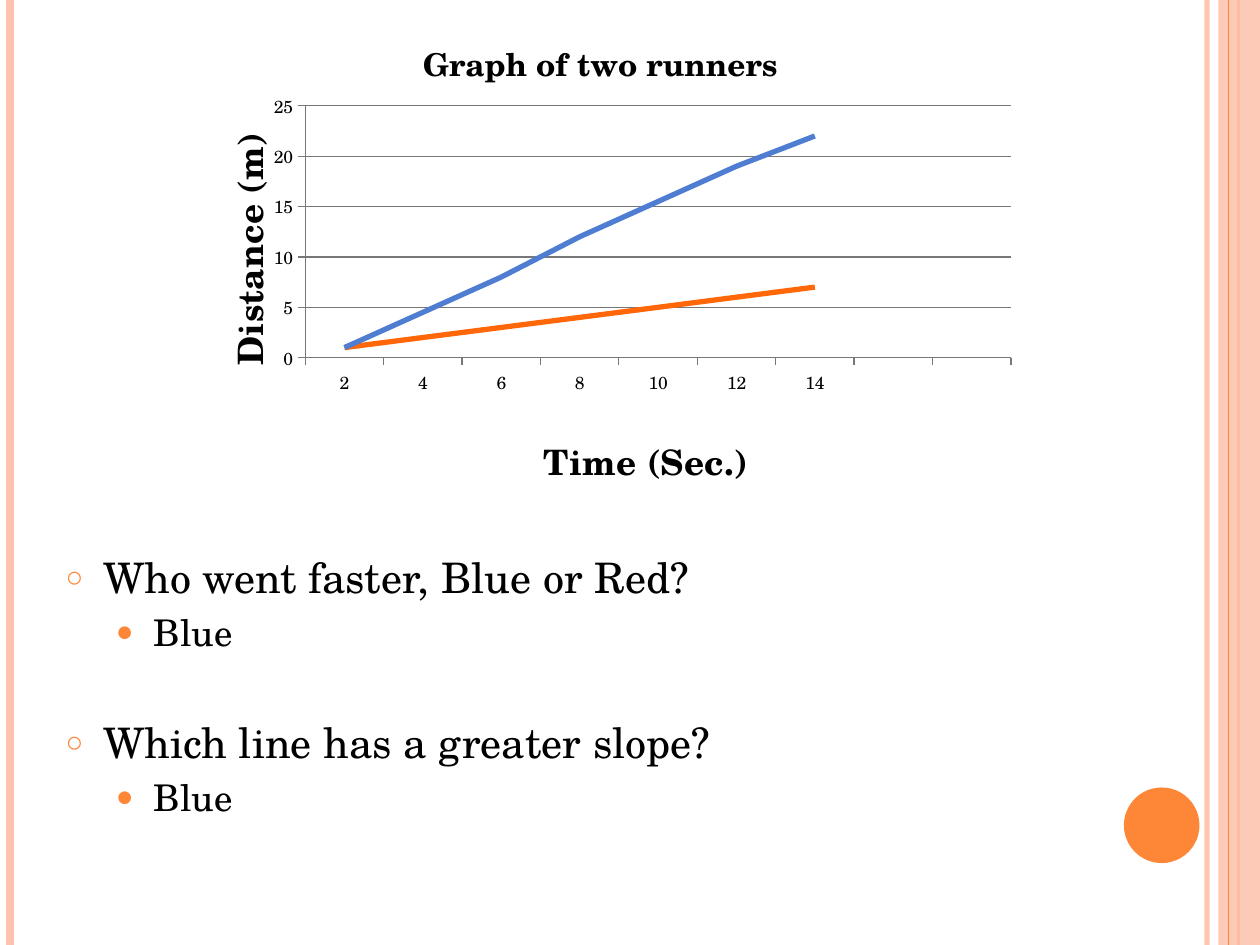
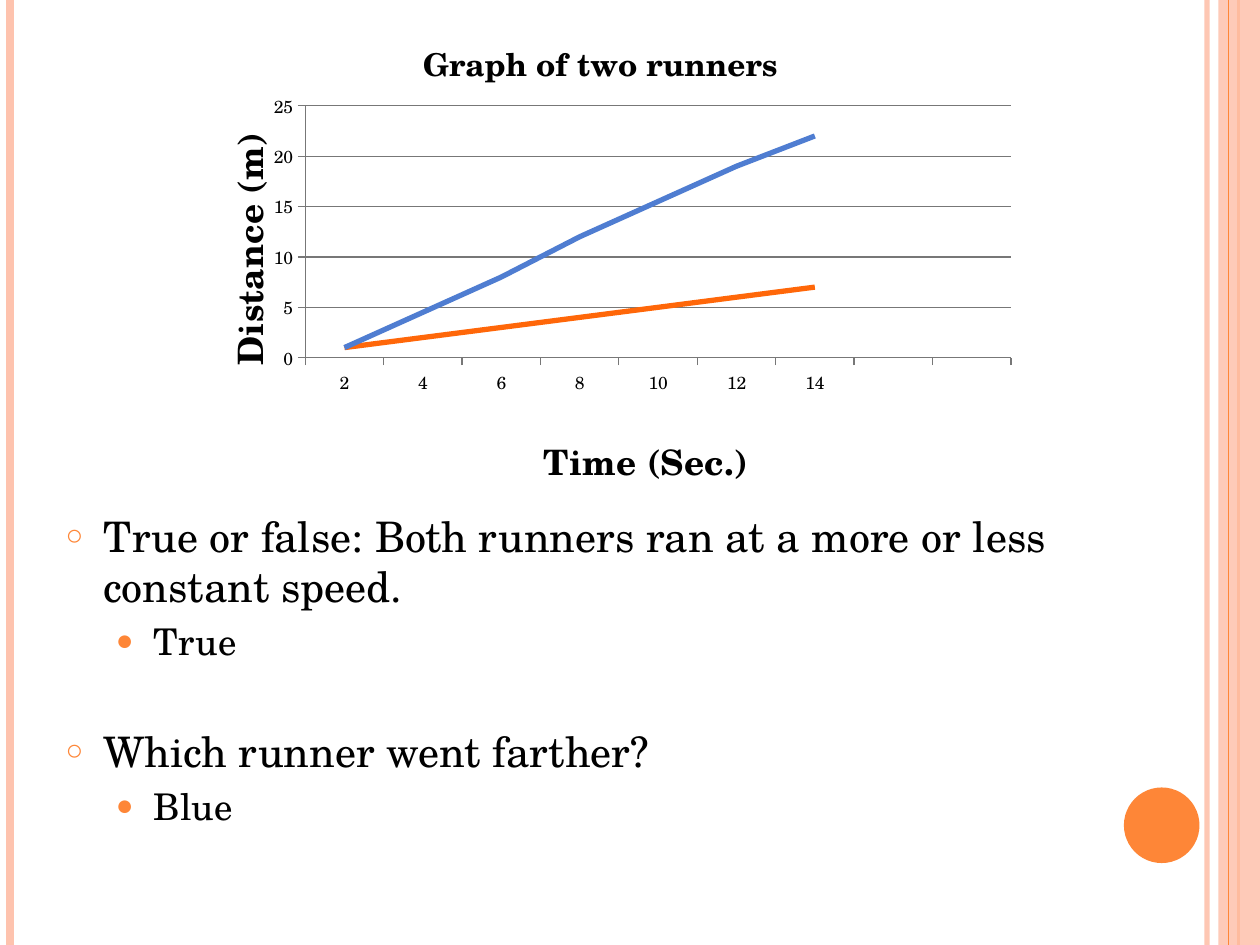
"""Builds two question slides about a distance-time graph of two runners."""
from dataclasses import dataclass
from typing import Optional

from lxml.etree import SubElement
from pptx import Presentation
from pptx.chart.data import CategoryChartData
from pptx.dml.color import RGBColor
from pptx.enum.chart import XL_CHART_TYPE, XL_TICK_MARK
from pptx.enum.shapes import MSO_CONNECTOR, MSO_SHAPE
from pptx.enum.text import MSO_ANCHOR, MSO_AUTO_SIZE
from pptx.oxml.ns import qn
from pptx.util import Inches, Pt

FONT = "TeX Gyre Schola"
COLORS = {
    "text": "000000",
    "accent": "FE8637",
    "pale": "FEC3AE",
    "red_runner": "FF6709",
    "blue_runner": "4F7DD1",
    "grid": "777777",
}
TIMES = ["2", "4", "6", "8", "10", "12", "14", "", ""]


@dataclass
class Rule:
    x: float
    color: str
    width: float
    opacity: int = 100


@dataclass
class Block:
    left: float
    top: float
    width: float
    height: float
    preset: MSO_SHAPE
    color: str
    opacity: int = 100


@dataclass
class Runner:
    name: str
    color: str
    distances: list[Optional[float]]


@dataclass
class Level:
    size: int
    margin: float
    bullet: str
    bullet_percent: int


@dataclass
class QuestionSlide:
    body_top: float
    questions: list[tuple[str, str]]


DECORATIONS = [
    Rule(9.58, "pale", 3, 93),
    Rule(0.08, "pale", 4.5),
    Rule(9.83, "accent", 1.5),
    Block(9.67, 0, 0.33, 7.5, MSO_SHAPE.RECTANGLE, "pale", 87),
    Rule(9.75, "accent", 0.75),
    Block(8.92, 6.25, 0.6, 0.6, MSO_SHAPE.OVAL, "accent"),
]
RUNNERS = [
    Runner("Series 1", "red_runner", [1, 2, 3, 4, 5, 6, 7, None, None]),
    Runner("Series 2", "blue_runner", [1, 4.5, 8, 12, 15.5, 19, 22, None, None]),
]
QUESTION = Level(24, 0.3, "○", 70)
ANSWER = Level(21, 0.7, "●", 80)
SLIDES = [
    QuestionSlide(4.33, [
        ("Who went faster, Blue or Red?", "Blue"),
        ("Which line has a greater slope?", "Blue"),
    ]),
    QuestionSlide(4, [
        ("True or false: Both runners ran at a more or less constant speed.", "True"),
        ("Which runner went farther?", "Blue"),
    ]),
]


def rgb(name: str) -> RGBColor:
    """Return a named palette colour."""
    return RGBColor.from_string(COLORS[name])


def set_opacity(shape, percent: int) -> None:
    """Apply an opacity to the colour of a shape's fill or line."""
    if percent < 100:
        color = next(shape.element.spPr.iter(qn("a:srgbClr")))
        SubElement(color, qn("a:alpha"), val=str(percent * 1000))


def draw_rule(slide, rule: Rule) -> None:
    """Draw a full-height vertical line."""
    x = Inches(rule.x)
    line = slide.shapes.add_connector(MSO_CONNECTOR.STRAIGHT, x, 0, x, Inches(7.5))
    line.line.color.rgb = rgb(rule.color)
    line.line.width = Pt(rule.width)
    set_opacity(line, rule.opacity)
    SubElement(line.element.spPr, qn("a:effectLst"))


def draw_block(slide, block: Block) -> None:
    """Draw a filled shape without an outline."""
    shape = slide.shapes.add_shape(
        block.preset, Inches(block.left), Inches(block.top),
        Inches(block.width), Inches(block.height))
    shape.shadow.inherit = False
    shape.fill.solid()
    shape.fill.fore_color.rgb = rgb(block.color)
    shape.line.fill.background()
    set_opacity(shape, block.opacity)


def format_paragraph(paragraph, text: str, level: Level) -> None:
    """Fill a paragraph and give it its level's font, indent and bullet."""
    paragraph.text = text
    font = paragraph.runs[0].font
    font.name, font.size = FONT, Pt(level.size)
    font.color.rgb = rgb("text")
    properties = paragraph._p.get_or_add_pPr()
    properties.set("marL", str(Inches(level.margin)))
    properties.set("indent", str(Inches(-0.3)))
    bullet_color = SubElement(properties, qn("a:buClr"))
    SubElement(bullet_color, qn("a:srgbClr"), val=COLORS["accent"])
    SubElement(properties, qn("a:buSzPct"), val=str(level.bullet_percent * 1000))
    SubElement(properties, qn("a:buChar"), char=level.bullet)


def fill_body(body, content: QuestionSlide) -> None:
    """Place the body placeholder and write questions with their answers."""
    body.left, body.top = Inches(0.42), Inches(content.body_top)
    body.width, body.height = Inches(9.33), Inches(3.08)
    frame = body.text_frame
    frame.auto_size = MSO_AUTO_SIZE.NONE
    frame.vertical_anchor = MSO_ANCHOR.TOP
    for index, (question, answer) in enumerate(content.questions):
        paragraph = frame.add_paragraph() if index else frame.paragraphs[0]
        paragraph.space_before = Pt(36 if index else 6)
        format_paragraph(paragraph, question, QUESTION)
        paragraph = frame.add_paragraph()
        paragraph.level = 1
        format_paragraph(paragraph, answer, ANSWER)


def set_layout(element, position: int, **fractions: float) -> None:
    """Give a chart element a manual layout in fractions of the chart."""
    for old_layout in element.findall(qn("c:layout")):
        element.remove(old_layout)
    layout = element.makeelement(qn("c:layout"))
    element.insert(position, layout)
    manual = SubElement(layout, qn("c:manualLayout"))
    if "w" in fractions:
        SubElement(manual, qn("c:layoutTarget"), val="inner")
    for axis in ("xMode", "yMode"):
        SubElement(manual, qn(f"c:{axis}"), val="edge")
    for name, value in fractions.items():
        SubElement(manual, qn(f"c:{name}"), val=str(value))


def set_chart_title(title, text: str, size: int, x: float, y: float) -> None:
    """Write a bold chart or axis title and place it."""
    title.text_frame.text = text
    font = title.text_frame.paragraphs[0].runs[0].font
    font.name, font.size, font.bold = FONT, Pt(size), True
    font.color.rgb = rgb("text")
    set_layout(title.element, 1, x=x, y=y)


def add_runner_chart(slide) -> None:
    """Add the line chart of both runners."""
    data = CategoryChartData()
    data.categories = TIMES
    for runner in RUNNERS:
        data.add_series(runner.name, runner.distances)
    chart = slide.shapes.add_chart(
        XL_CHART_TYPE.LINE, Inches(1.33), 0, Inches(6.83), Inches(4), data).chart
    chart.has_legend = False
    chart.font.name, chart.font.size = FONT, Pt(10)
    chart.font.color.rgb = rgb("text")
    set_chart_title(chart.chart_title, "Graph of two runners", 18, 0.29, 0.06)
    chart.chart_title.element.find(qn("c:overlay")).set("val", "1")
    set_layout(next(chart.element.iter(qn("c:plotArea"))), 0,
               x=0.16, y=0.21, w=0.82, h=0.5)

    time_axis, distance_axis = chart.category_axis, chart.value_axis
    set_chart_title(time_axis.axis_title, "Time (Sec.)", 20, 0.43, 0.84)
    set_chart_title(distance_axis.axis_title, "Distance (m)", 20, 0.05, 0.25)
    next(distance_axis.axis_title.element.iter(qn("a:bodyPr"))).set("rot", "-5400000")
    distance_axis.minimum_scale, distance_axis.maximum_scale = 0, 25
    distance_axis.major_unit = 5
    distance_axis.has_major_gridlines = True
    for axis in (time_axis, distance_axis):
        axis.major_tick_mark = XL_TICK_MARK.OUTSIDE
        axis.minor_tick_mark = XL_TICK_MARK.NONE
    for part in (time_axis, distance_axis, distance_axis.major_gridlines):
        part.format.line.color.rgb = rgb("grid")
        part.format.line.width = Pt(0.75)

    plot = chart.plots[0]
    plot.vary_by_categories = False
    for series, runner in zip(plot.series, RUNNERS):
        series.smooth = False
        series.format.line.color.rgb = rgb(runner.color)
        series.format.line.width = Pt(3)


def build_slide(presentation, content: QuestionSlide) -> None:
    """Build one slide with decorations, questions and the chart."""
    slide = presentation.slides.add_slide(presentation.slide_layouts[1])
    title = slide.shapes.title.element
    title.getparent().remove(title)
    for decoration in DECORATIONS:
        if isinstance(decoration, Rule):
            draw_rule(slide, decoration)
        else:
            draw_block(slide, decoration)
    fill_body(slide.placeholders[1], content)
    add_runner_chart(slide)


def main() -> None:
    """Create and save the presentation."""
    presentation = Presentation()
    presentation.slide_width, presentation.slide_height = Inches(10), Inches(7.5)
    for content in SLIDES:
        build_slide(presentation, content)
    presentation.save("out.pptx")


if __name__ == "__main__":
    main()
